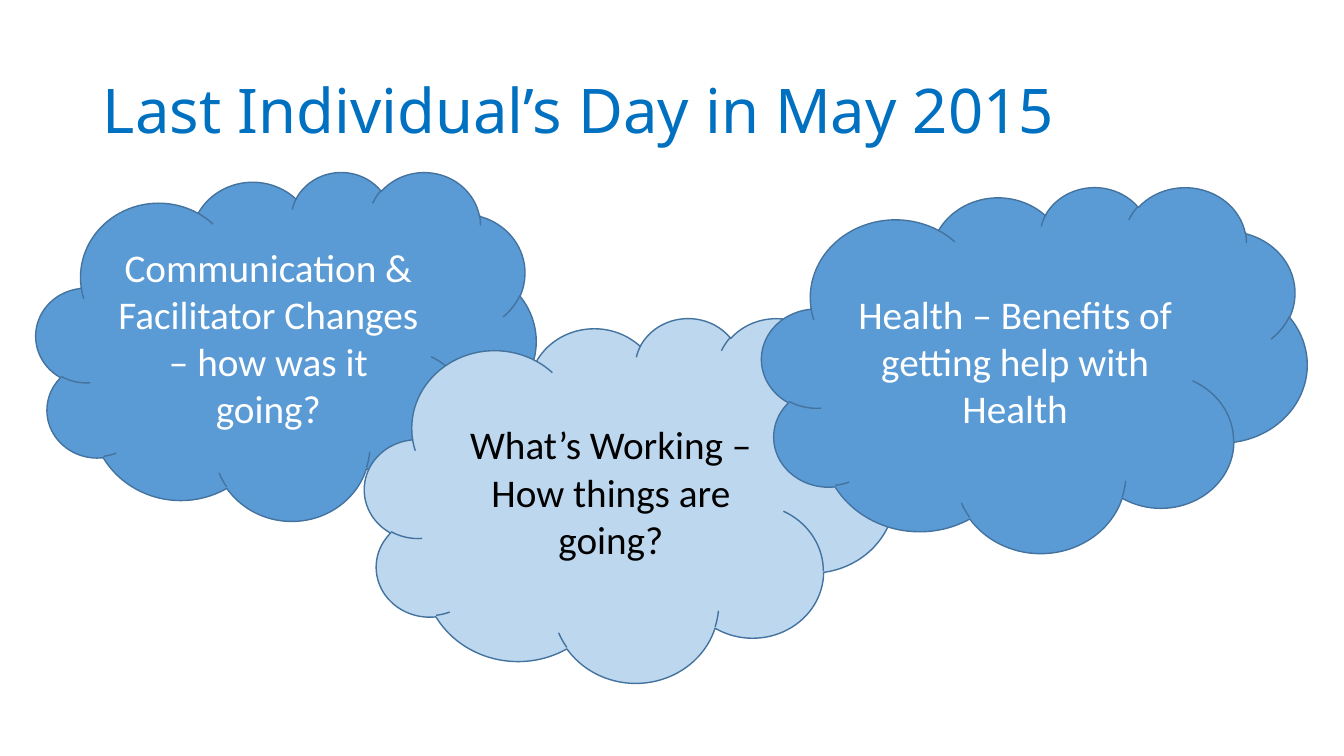
from dataclasses import dataclass

from pptx import Presentation
from pptx.dml.color import RGBColor
from pptx.enum.shapes import MSO_SHAPE
from pptx.enum.text import MSO_ANCHOR, MSO_AUTO_SIZE, PP_ALIGN
from pptx.util import Cm, Pt

CLOUD = MSO_SHAPE.CLOUD
MIDDLE = MSO_ANCHOR.MIDDLE
NO_FIT = MSO_AUTO_SIZE.NONE
LEFT, CENTER = PP_ALIGN.LEFT, PP_ALIGN.CENTER


@dataclass(frozen=True)
class Theme:
    title_font: str = "Noto Sans"
    body_font: str = "Calibri"
    title_size: int = 44
    body_size: int = 28
    title: str = "0070C0"
    blue: str = "5B9BD5"
    pale: str = "BDD7EE"
    outline: str = "43739E"
    white: str = "FFFFFF"
    black: str = "000000"


THEME = Theme()

# Text, fill, text colour, then left, top, width and height in cm
CLOUDS = [
    ("Communication & Facilitator Changes – how was it going?",
     THEME.blue, THEME.white, (0.91, 4.32, 12.6, 8.79)),
    ("What’s Working – How things are going?",
     THEME.pale, THEME.black, (9.19, 8, 13.36, 9.19)),
    ("Health – Benefits of getting help with Health",
     THEME.blue, THEME.white, (19.2, 4.7, 13.74, 9.22)),
]


def write_text(sp, text, font, size, color, align):
    tf = sp.text_frame
    tf.text = text
    tf.word_wrap = True
    tf.auto_size = NO_FIT
    tf.vertical_anchor = MIDDLE
    p = tf.paragraphs[0]
    p.alignment = align
    r = p.runs[0]
    r.font.name = font
    r.font.size = Pt(size)
    r.font.color.rgb = RGBColor.from_string(color)
    return p


def set_title(s, text):
    sp = s.shapes.title
    sp.left, sp.top, sp.width, sp.height = map(Cm, (2.34, 1.02, 29.21, 3.68))
    p = write_text(sp, text, THEME.title_font, THEME.title_size, THEME.title, LEFT)
    p.line_spacing = 0.9


def add_cloud(s, text, fill, color, box):
    sp = s.shapes.add_shape(CLOUD, *map(Cm, box))
    sp.shadow.inherit = False
    sp.fill.solid()
    sp.fill.fore_color.rgb = RGBColor.from_string(fill)
    sp.line.color.rgb = RGBColor.from_string(THEME.outline)
    sp.line.width = Pt(1)
    write_text(sp, text, THEME.body_font, THEME.body_size, color, CENTER)


def main():
    prs = Presentation()
    prs.slide_width, prs.slide_height = Cm(33.87), Cm(19.05)
    s = prs.slides.add_slide(prs.slide_layouts[5])

    # Heading
    set_title(s, "Last Individual’s Day in May 2015")

    # Overlapping topic clouds, back to front
    for cloud in CLOUDS:
        add_cloud(s, *cloud)

    prs.save("out.pptx")


if __name__ == "__main__":
    main()
